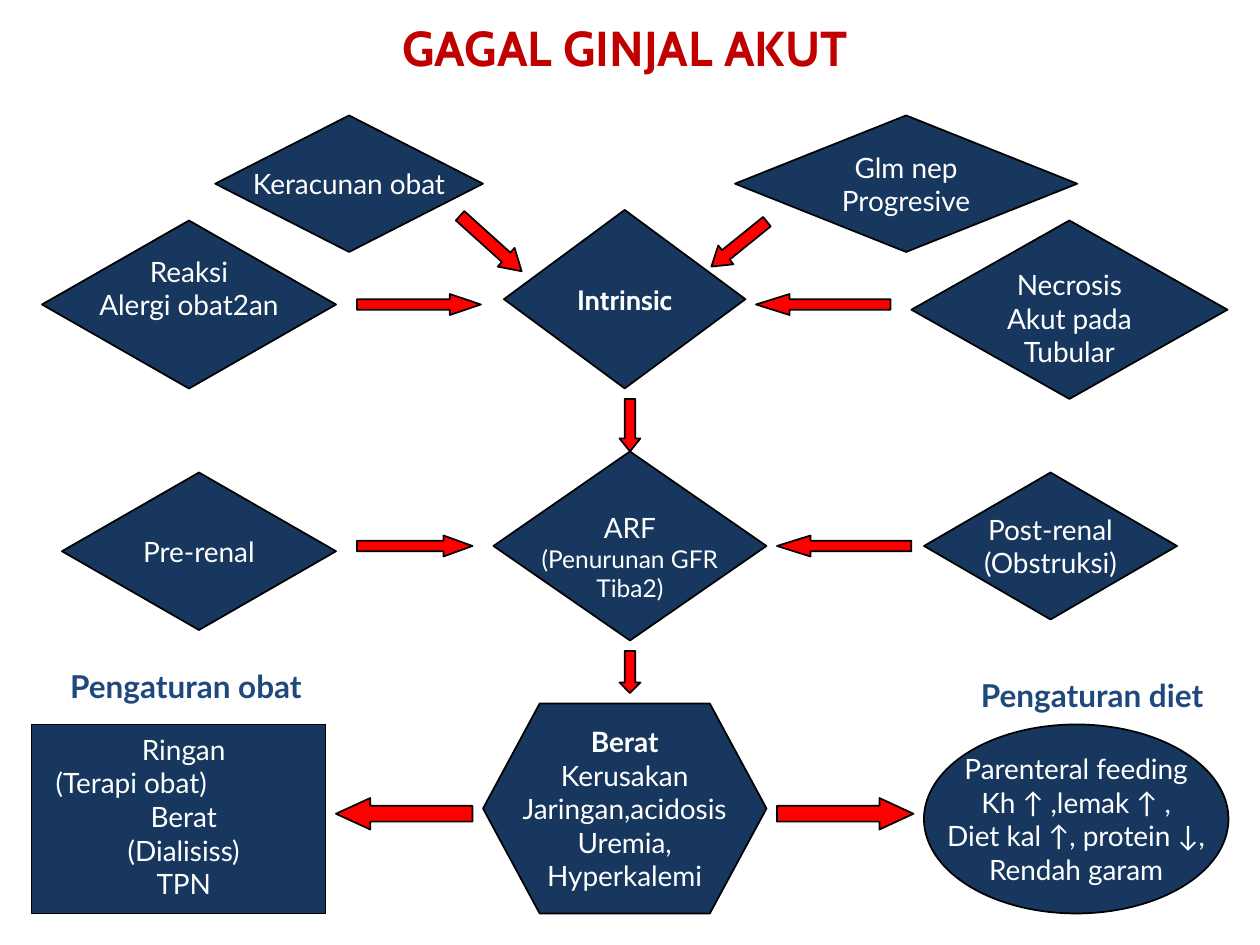
"""Build the acute kidney failure flow slide."""
from dataclasses import dataclass

from pptx import Presentation
from pptx.dml.color import RGBColor
from pptx.enum.shapes import MSO_SHAPE
from pptx.enum.text import MSO_ANCHOR, MSO_AUTO_SIZE, PP_ALIGN
from pptx.shapes.autoshape import Shape
from pptx.slide import Slide
from pptx.text.text import TextFrame
from pptx.util import Inches, Pt

COLUMNS, ROWS = 120, 90
WIDTH, HEIGHT = Inches(10), Inches(7.5)


@dataclass(frozen=True)
class Theme:
    navy: RGBColor = RGBColor(0x17, 0x37, 0x5E)
    heading: RGBColor = RGBColor(0x1F, 0x49, 0x7D)
    title: RGBColor = RGBColor(0xC0, 0x00, 0x00)
    arrow: RGBColor = RGBColor(0xFF, 0x00, 0x00)
    outline: RGBColor = RGBColor(0x00, 0x00, 0x00)
    label: RGBColor = RGBColor(0xFF, 0xFF, 0xFF)
    body_font: str = "Lato"
    title_font: str = "Cabin"
    title_size: int = 28
    heading_size: int = 18
    label_size: int = 16
    detail_size: int = 14


THEME = Theme()


@dataclass(frozen=True)
class Area:
    column: float
    row: float
    columns: float
    rows: float

    def bounds(self) -> tuple[int, int, int, int]:
        return (across(self.column), down(self.row),
                across(self.columns), down(self.rows))


@dataclass(frozen=True)
class Line:
    text: str
    size: int = THEME.label_size
    font: str = THEME.body_font
    bold: bool = False
    indent: float | None = None


@dataclass(frozen=True)
class Node:
    area: Area
    lines: tuple[Line, ...]
    kind: MSO_SHAPE = MSO_SHAPE.DIAMOND
    pad_left: float = 0
    pad_top: float = 0
    pad_bottom: float = 0


@dataclass(frozen=True)
class Arrow:
    kind: MSO_SHAPE
    area: Area
    head: float
    rotation: float = 0


@dataclass(frozen=True)
class Heading:
    text: str
    area: Area


def across(columns: float) -> int:
    return round(WIDTH * columns / COLUMNS)


def down(rows: float) -> int:
    return round(HEIGHT * rows / ROWS)


def lines(text: str) -> tuple[Line, ...]:
    return tuple(Line(part) for part in text.split("\n"))


DIAMOND, HEXAGON = MSO_SHAPE.DIAMOND, MSO_SHAPE.HEXAGON
LEFT, RIGHT, DOWN = MSO_SHAPE.LEFT_ARROW, MSO_SHAPE.RIGHT_ARROW, MSO_SHAPE.DOWN_ARROW

NODES = (
    Node(Area(88, 69, 29, 18),
         lines("Parenteral feeding\nKh ↑ ,lemak ↑ ,\nDiet kal ↑, protein ↓,\nRendah garam"),
         MSO_SHAPE.OVAL),
    Node(Area(3, 69, 28, 18),
         (Line("Ringan"), Line("(Terapi obat)", indent=1.3), *lines("Berat\n(Dialisiss)\nTPN")),
         MSO_SHAPE.RECTANGLE, pad_left=1, pad_bottom=0.5),
    Node(Area(5.9, 45, 26.1, 15), lines("Pre-renal")),
    Node(Area(46, 67, 27, 20),
         (Line("Berat", bold=True), *lines("Kerusakan\nJaringan,acidosis\nUremia,\nHyperkalemi")),
         HEXAGON),
    Node(Area(47, 43, 26, 18),
         (Line("ARF"), Line("(Penurunan GFR", THEME.detail_size), Line("Tiba2)", THEME.detail_size)),
         pad_top=2),
    Node(Area(88, 45, 24.1, 14), lines("Post-renal\n(Obstruksi)")),
    Node(Area(48, 20, 23, 17), (Line("Intrinsic", font=THEME.title_font, bold=True),)),
    Node(Area(4, 21, 28, 16), lines("Reaksi\nAlergi obat2an"), pad_bottom=3.2),
    Node(Area(86.8, 21, 30.1, 17), lines("Necrosis\nAkut pada\nTubular"), pad_top=1.6),
    Node(Area(20.5, 11, 25.5, 13), lines("Keracunan obat")),
    Node(Area(70, 11, 32.6, 13), lines("Glm nep\nProgresive")),
)

ARROWS = (
    Arrow(DOWN, Area(59, 38, 2, 5), 0.62),
    Arrow(DOWN, Area(59, 62, 2, 4), 0.5),
    Arrow(LEFT, Area(32, 76, 13, 3), 1.09),
    Arrow(RIGHT, Area(74, 76, 13, 3), 1.08),
    Arrow(RIGHT, Area(34, 51, 11, 2), 1.38),
    Arrow(LEFT, Area(74, 51, 12.8, 2), 1.6),
    Arrow(LEFT, Area(72, 28, 12.8, 2), 1.6),
    Arrow(RIGHT, Area(34, 28, 11.8, 2), 1.48),
    Arrow(RIGHT, Area(42.8, 22, 7.9, 2.4), 0.83, 42),
    Arrow(LEFT, Area(67, 22.1, 6.8, 2.3), 0.77, 321),
)

HEADINGS = (
    Heading("Pengaturan obat", Area(3.7, 62.9, 28, 4.8)),
    Heading("Pengaturan diet", Area(90, 63.8, 28, 4.8)),
)


def write(frame: TextFrame, text: str, *, size: int, color: RGBColor, font: str,
          bold: bool = False, indent: float | None = None) -> None:
    paragraph = frame.add_paragraph() if frame.text else frame.paragraphs[0]
    paragraph.alignment = PP_ALIGN.CENTER
    if indent is not None:
        paragraph.alignment = PP_ALIGN.LEFT
        paragraph._p.get_or_add_pPr().set("marL", str(across(indent)))
    run = paragraph.add_run()
    run.text = text
    run.font.size, run.font.name, run.font.bold = Pt(size), font, bold
    run.font.color.rgb = color


def draw_shape(slide: Slide, kind: MSO_SHAPE, area: Area, fill: RGBColor) -> Shape:
    shape = slide.shapes.add_shape(kind, *area.bounds())
    shape.shadow.inherit = False
    shape.fill.solid()
    shape.fill.fore_color.rgb = fill
    shape.line.color.rgb = THEME.outline
    shape.line.width = Pt(1)
    return shape


def draw_node(slide: Slide, node: Node) -> None:
    shape = draw_shape(slide, node.kind, node.area, THEME.navy)
    if node.kind == HEXAGON:
        shape.adjustments[0] = 0.27
    frame = shape.text_frame
    frame.word_wrap = node.kind == MSO_SHAPE.RECTANGLE
    frame.vertical_anchor = MSO_ANCHOR.MIDDLE
    frame.margin_left, frame.margin_right = across(node.pad_left), 0
    frame.margin_top, frame.margin_bottom = down(node.pad_top), down(node.pad_bottom)
    for line in node.lines:
        write(frame, line.text, size=line.size, color=THEME.label, font=line.font,
              bold=line.bold, indent=line.indent)


def draw_arrow(slide: Slide, arrow: Arrow) -> None:
    shape = draw_shape(slide, arrow.kind, arrow.area, THEME.arrow)
    shape.adjustments[0], shape.adjustments[1] = 0.5, arrow.head
    shape.rotation = arrow.rotation


def draw_heading(slide: Slide, heading: Heading) -> None:
    frame = slide.shapes.add_textbox(*heading.area.bounds()).text_frame
    frame.word_wrap = True
    write(frame, heading.text, size=THEME.heading_size, color=THEME.heading,
          font=THEME.body_font, bold=True)


def draw_title(slide: Slide, text: str, area: Area) -> None:
    title = slide.shapes.title
    title.left, title.top, title.width, title.height = area.bounds()
    title.text_frame.auto_size = MSO_AUTO_SIZE.NONE
    write(title.text_frame, text, size=THEME.title_size, color=THEME.title,
          font=THEME.title_font, bold=True)


def main() -> None:
    deck = Presentation()
    deck.slide_width, deck.slide_height = WIDTH, HEIGHT
    slide = deck.slides.add_slide(deck.slide_layouts[5])
    draw_title(slide, "GAGAL GINJAL AKUT", Area(32, 1, 55, 6.9))
    for node in NODES:
        draw_node(slide, node)
    for arrow in ARROWS:
        draw_arrow(slide, arrow)
    for heading in HEADINGS:
        draw_heading(slide, heading)
    deck.save("out.pptx")


if __name__ == "__main__":
    main()
